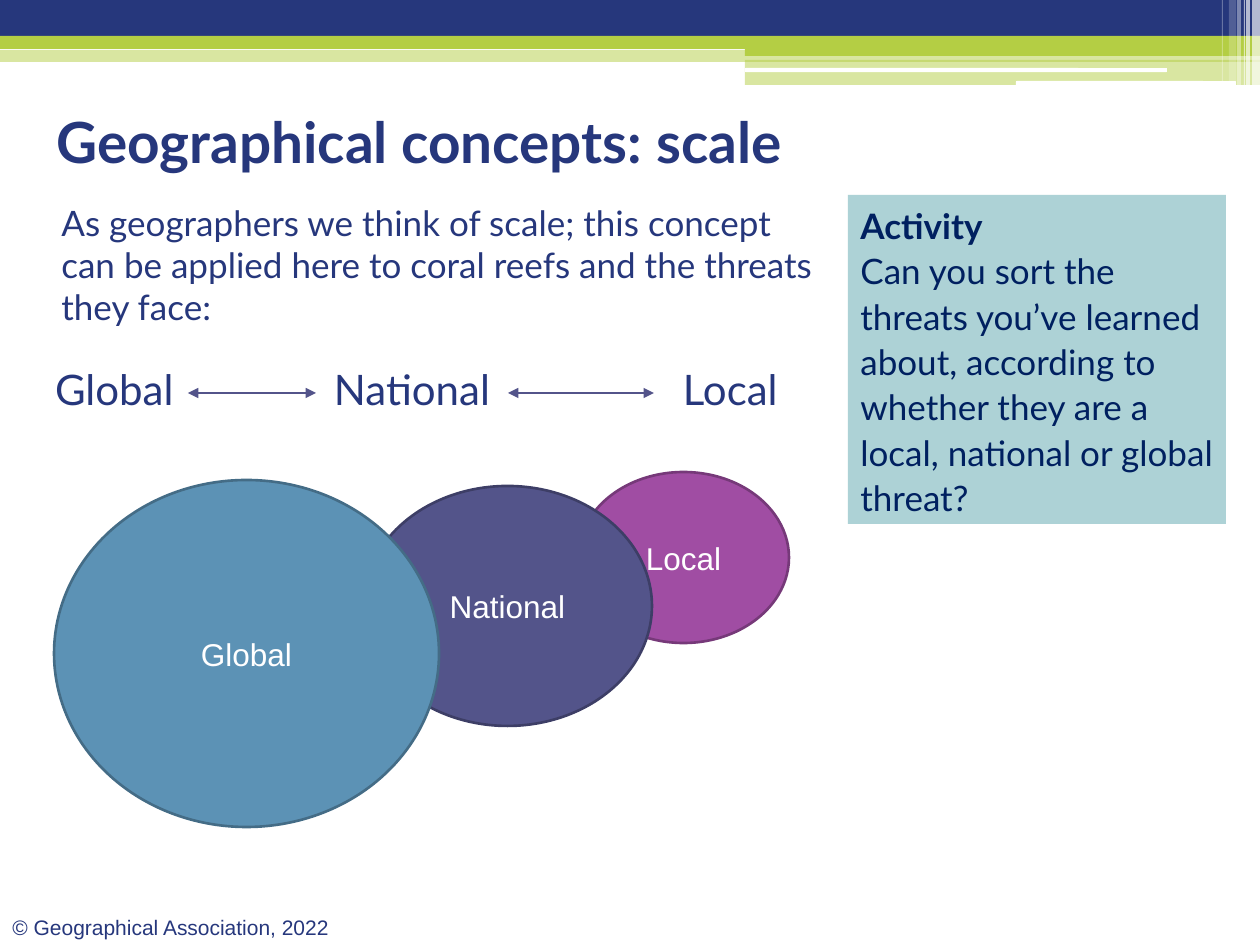
from lxml import etree
from pptx import Presentation
from pptx.dml.color import RGBColor
from pptx.enum.shapes import MSO_CONNECTOR, MSO_SHAPE
from pptx.enum.text import MSO_ANCHOR, PP_ALIGN
from pptx.oxml.ns import qn
from pptx.util import Pt

PX = 914400 / 126
RECTANGLE = MSO_SHAPE.RECTANGLE
ROUNDED = MSO_SHAPE.ROUNDED_RECTANGLE
OVAL = MSO_SHAPE.OVAL
STRAIGHT = MSO_CONNECTOR.STRAIGHT
TOP, MIDDLE = MSO_ANCHOR.TOP, MSO_ANCHOR.MIDDLE
LEFT, CENTER = PP_ALIGN.LEFT, PP_ALIGN.CENTER

COLORS = {
    "navy": "26377C", "lime": "B4CE44", "white": "FFFFFF",
    "panel": "ADD2D6", "ink": "002060",
    "local": "A04DA3", "local_line": "763979",
    "national": "53548A", "national_line": "3D3E66",
    "global": "5C92B5", "global_line": "446C86",
}

BANDS = [
    (0, 50, 1260, 12, "lime", 50),
    (0, 0, 1260, 43, "navy", 100),
    (0, 36, 1260, 13, "lime", 100),
    (745, 43, 515, 13, "lime", 100),
    (745, 60, 515, 25, "lime", 50),
]
WHITE_BARS = [(745, 68, 422, 4), (1016, 81, 220, 5)]
STRIPES = [
    (1252, 8, 85, 65), (1246, 4, 85, 65), (1244, 1, 85, 60),
    (1237, 4, 85, 40), (1229, 7, 81, 20), (1222, 1, 81, 30),
]
CIRCLES = [
    ("Local", 578, 472, 211, 171),
    ("National", 363, 486, 289, 240),
    ("Global", 54, 480, 385, 347),
]
SCALE_WORDS = [("Global", 55, 130), ("National", 334, 170), ("Local", 683, 110)]
ARROWS = [(188, 316), (508, 654)]


def px(value):
    return round(value * PX)


def color(name):
    return RGBColor.from_string(COLORS[name])


def add_shape(slide, kind, left, top, width, height, fill, opacity=100, line=None):
    shape = slide.shapes.add_shape(kind, px(left), px(top), px(width), px(height))
    shape.shadow.inherit = False
    shape.fill.solid()
    shape.fill.fore_color.rgb = color(fill)
    if opacity < 100:
        fill_color = shape.fill._xPr.find(qn("a:solidFill"))[0]
        etree.SubElement(fill_color, qn("a:alpha"), val=str(opacity * 1000))
    if line:
        shape.line.color.rgb = color(line)
        shape.line.width = Pt(1.5)
    else:
        shape.line.fill.background()
    return shape


def write_text(shape, text, size, fill, font="Lato", bold=False, anchor=TOP, align=LEFT):
    text_frame = shape.text_frame
    text_frame.text = text
    text_frame.word_wrap = True
    text_frame.vertical_anchor = anchor
    for paragraph in text_frame.paragraphs:
        paragraph.alignment = align
        for run in paragraph.runs:
            run.font.name = font
            run.font.size = Pt(size)
            run.font.bold = bold
            run.font.color.rgb = color(fill)
    return text_frame


def add_text(slide, left, top, width, height, text, size, **style):
    box = slide.shapes.add_textbox(px(left), px(top), px(width), px(height))
    return write_text(box, text, size, "navy", **style)


def add_arrow(slide, start, end, y):
    arrow = slide.shapes.add_connector(STRAIGHT, px(start), px(y), px(end), px(y))
    arrow.line.color.rgb = color("national")
    arrow.line.width = Pt(0.75)
    for tag in ("a:headEnd", "a:tailEnd"):
        etree.SubElement(arrow.line._ln, qn(tag), type="triangle")
    etree.SubElement(arrow._element.spPr, qn("a:effectLst"))


def add_header(slide):
    for left, top, width, height, fill, opacity in BANDS:
        add_shape(slide, RECTANGLE, left, top, width, height, fill, opacity)
    for left, top, width, height in WHITE_BARS:
        add_shape(slide, ROUNDED, left, top, width, height, "white")
    for left, width, height, opacity in STRIPES:
        add_shape(slide, RECTANGLE, left, 0, width, height, "white", opacity)


def add_activity(slide):
    panel = add_shape(slide, RECTANGLE, 848, 195, 378, 329, "panel")
    text_frame = write_text(
        panel,
        "Activity\nCan you sort the threats you’ve learned about, according to "
        "whether they are a local, national or global threat?",
        20, "ink")
    for paragraph in text_frame.paragraphs:
        paragraph.line_spacing = 1.08
    text_frame.paragraphs[0].runs[0].font.bold = True


def add_circles(slide):
    for name, left, top, width, height in CIRCLES:
        key = name.lower()
        circle = add_shape(slide, OVAL, left, top, width, height, key, line=key + "_line")
        write_text(circle, name, 18, "white", font="Arial", anchor=MIDDLE, align=CENTER)


def add_scale_line(slide):
    for word, left, width in SCALE_WORDS:
        text_frame = add_text(slide, left, 357, width, 82, word, 24)
        text_frame.margin_left = text_frame.margin_right = 0
    for start, end in ARROWS:
        add_arrow(slide, start, end, 393)


def main():
    presentation = Presentation()
    presentation.slide_width = px(1260)
    presentation.slide_height = px(945)
    slide = presentation.slides.add_slide(presentation.slide_layouts[6])
    add_header(slide)
    add_text(slide, 0, 908, 362, 38, "© Geographical Association, 2022", 12, font="Arial")
    add_text(slide, 44, 106, 1134, 69, "Geographical concepts: scale", 32.4,
             bold=True, anchor=MIDDLE)
    add_text(slide, 49, 195, 780, 136,
             "As geographers we think of scale; this concept can be applied here "
             "to coral reefs and the threats they face:", 20)
    add_activity(slide)
    add_circles(slide)
    add_scale_line(slide)
    presentation.save("out.pptx")


if __name__ == "__main__":
    main()
